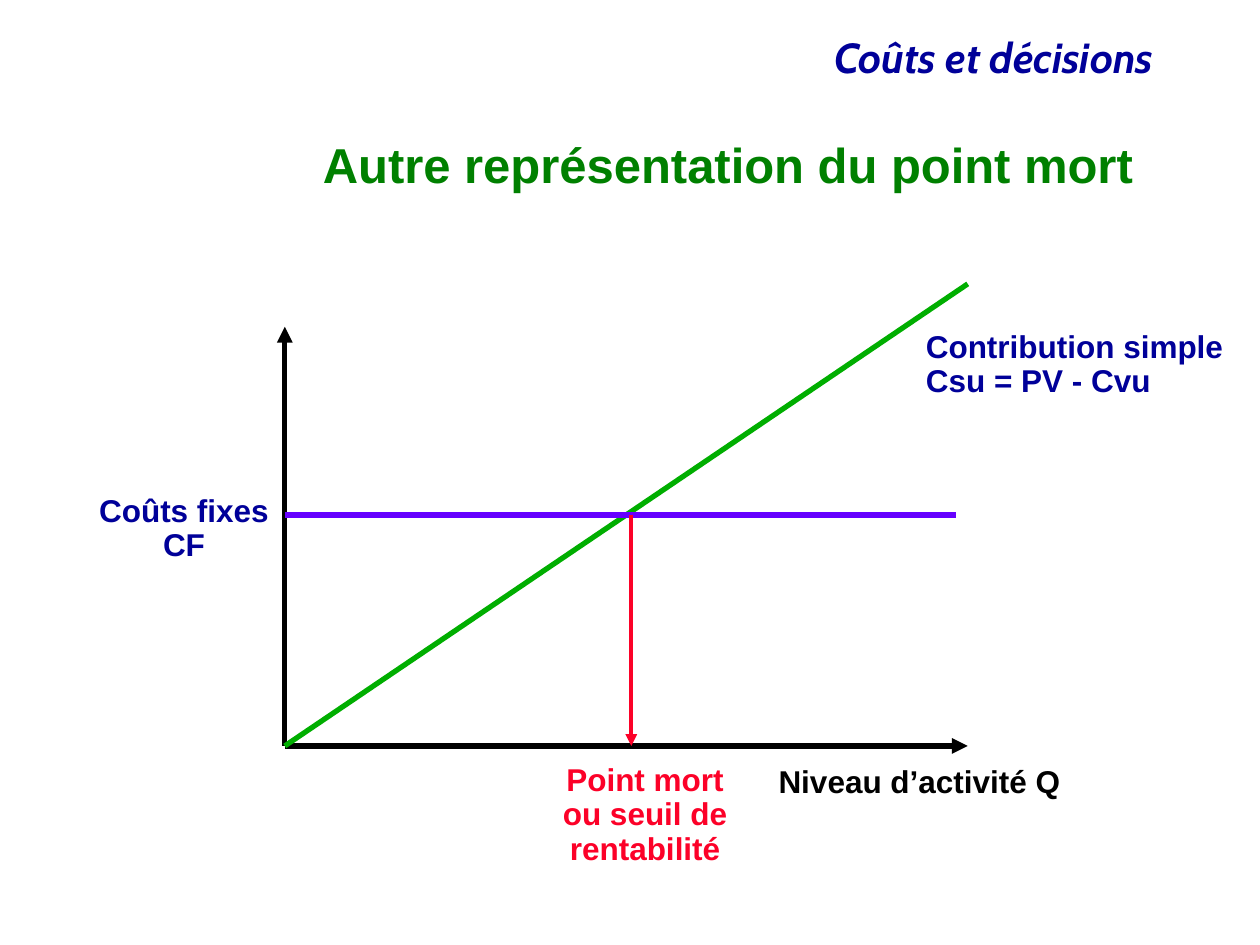
from lxml import etree
from pptx import Presentation
from pptx.dml.color import RGBColor
from pptx.enum.shapes import MSO_CONNECTOR
from pptx.enum.text import MSO_ANCHOR, MSO_AUTO_SIZE, PP_ALIGN
from pptx.oxml.ns import qn
from pptx.util import Pt

STRAIGHT = MSO_CONNECTOR.STRAIGHT
LEFT, CENTER, RIGHT = PP_ALIGN.LEFT, PP_ALIGN.CENTER, PP_ALIGN.RIGHT
TOP, MIDDLE = MSO_ANCHOR.TOP, MSO_ANCHOR.MIDDLE
FIT_SHAPE, NO_FIT = MSO_AUTO_SIZE.SHAPE_TO_FIT_TEXT, MSO_AUTO_SIZE.NONE

NAVY = RGBColor(0x00, 0x00, 0x99)
DARK_GREEN = RGBColor(0x00, 0x80, 0x00)
GREEN = RGBColor(0x00, 0xAE, 0x00)
VIOLET = RGBColor(0x66, 0x00, 0xFF)
RED = RGBColor(0xFC, 0x01, 0x28)
BLACK = RGBColor(0x00, 0x00, 0x00)


def add_text(slide, box, paragraphs, color, align=LEFT, size=18, font="Arial",
             italic=None, wrap=False, anchor=TOP, fit=FIT_SHAPE):
    frame = slide.shapes.add_textbox(*map(Pt, box)).text_frame
    frame.word_wrap = wrap
    frame.auto_size = fit
    frame.vertical_anchor = anchor
    for index, lines in enumerate(paragraphs):
        paragraph = frame.add_paragraph() if index else frame.paragraphs[0]
        paragraph.alignment = align
        paragraph.line_spacing = 0.9
        for number, line in enumerate(lines):
            if number:
                paragraph.add_line_break()
            run = paragraph.add_run()
            run.text = line
            run.font.name = font
            run.font.size = Pt(size)
            run.font.bold = True
            run.font.italic = italic
            run.font.color.rgb = color


def add_line(slide, start, end, color, width=3, arrow=False):
    connector = slide.shapes.add_connector(STRAIGHT, *map(Pt, (*start, *end)))
    connector.line.color.rgb = color
    connector.line.width = Pt(width)
    if arrow:
        outline = connector.line._get_or_add_ln()
        etree.SubElement(outline, qn("a:tailEnd"), type="triangle")
    etree.SubElement(connector._element.spPr, qn("a:effectLst"))


def add_heading(slide, left, top, width):
    add_text(slide, (left + 6, top, width - 6, 33.12), [["Coûts et décisions"]],
             NAVY, RIGHT, size=24, font="Cabin", italic=True, wrap=True)
    add_text(slide, (left, top + 59.76, width - 11.52, 36),
             [["Autre représentation du point mort"]],
             DARK_GREEN, RIGHT, size=28, wrap=True, anchor=MIDDLE, fit=NO_FIT)


def add_break_even_graph(slide, left, top, width, height):
    right, bottom = left + width, top + height
    fixed_cost = top + height / 2
    break_even = left + 198
    origin = (left, bottom)

    add_line(slide, origin, (left, top + 24.5), BLACK, arrow=True)
    add_line(slide, origin, (right, bottom), BLACK, arrow=True)
    add_line(slide, origin, (right, top), GREEN)
    add_line(slide, (left, fixed_cost), (right - 6.5, fixed_cost), VIOLET)
    add_line(slide, (break_even, fixed_cost), (break_even, bottom), RED,
             width=2.25, arrow=True)

    add_text(slide, (right - 31, top + 23.75, 188, 46),
             [["Contribution simple"], ["Csu = PV - Cvu"]], NAVY, wrap=True)
    add_text(slide, (left - 113.75, fixed_cost - 14.75, 112.3, 46.8),
             [["Coûts fixes", "CF"]], NAVY, CENTER)
    add_text(slide, (break_even - 46.8, bottom + 7.2, 109.4, 66.2),
             [["Point mort", "ou seuil de"], ["rentabilité"]], RED, CENTER)
    add_text(slide, (right - 115.2, bottom + 8, 177, 26.6),
             [["Niveau d’activité Q"]], BLACK)


def main():
    presentation = Presentation()
    presentation.slide_width = Pt(720)
    presentation.slide_height = Pt(540)
    slide = presentation.slides.add_slide(presentation.slide_layouts[6])
    add_heading(slide, 84, 18, 582)
    add_break_even_graph(slide, 162.75, 162.25, 390.25, 264)
    presentation.save("out.pptx")


if __name__ == "__main__":
    main()
